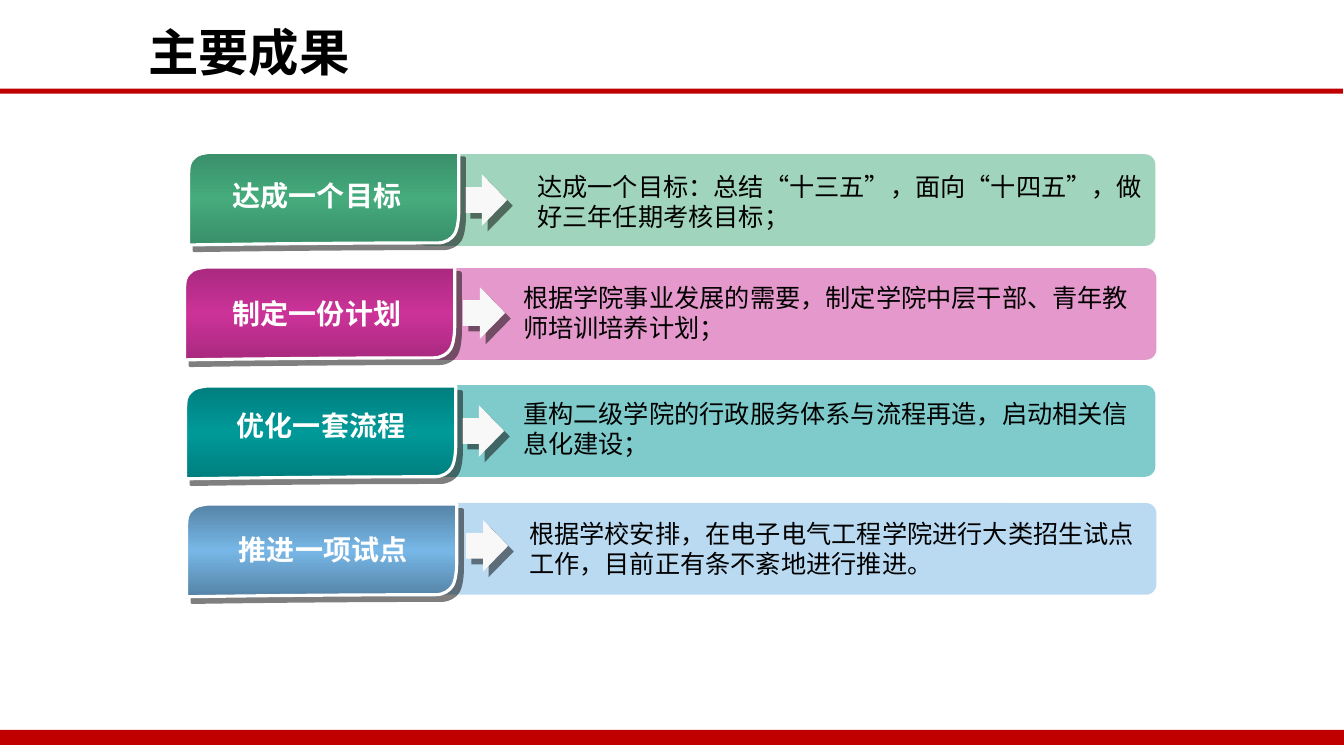
from copy import deepcopy
from dataclasses import dataclass

from lxml import etree
from pptx import Presentation
from pptx.dml.color import RGBColor
from pptx.enum import shapes, text
from pptx.oxml import ns
from pptx.shapes.autoshape import Shape
from pptx.slide import Slide
from pptx.util import Pt

PX = 9144
FONT = "Noto Sans CJK SC"
LINE_HEIGHT = 1.2
BLACK = RGBColor(0x00, 0x00, 0x00)
WHITE = RGBColor(0xFF, 0xFF, 0xFF)
RED = RGBColor(0xC0, 0x00, 0x00)
ARROW_GREY = RGBColor(0xF8, 0xF8, 0xF8)
ARROW_SHADOW = RGBColor(0x01, 0x01, 0x01)
GREEN = RGBColor(0x45, 0xAB, 0x7D)
PINK = RGBColor(0xCC, 0x33, 0x99)
TEAL = RGBColor(0x00, 0x99, 0x99)
BLUE = RGBColor(0x77, 0xB7, 0xE7)

Point = tuple[int, int]
Box = tuple[int, int, int, int]
TAB_START: Point = (21, 0)
TAB_SEGMENTS: list[tuple[Point, ...]] = [
    ((268, 0),),
    ((268, 0), (268, 30), (268, 59)),
    ((268, 59), (268, 74), (264, 81)),
    ((261, 86), (255, 90), (247, 90)),
    ((122, 90), (0, 92), (0, 92)),
    ((0, 27),),
    ((0, 12), (1, 10), (5, 6)),
    ((9, 1), (16, 1), (21, 0)),
]


@dataclass(frozen=True)
class Achievement:
    """One row: a coloured tab, an arrow and a band with its description."""

    label: str
    detail: str
    color: RGBColor
    shade: int
    band: Box
    tab: Point
    arrow: Point
    label_at: Point
    detail_box: Box


ACHIEVEMENTS = [
    Achievement("达成一个目标", "达成一个目标：总结“十三五”，面向“十四五”，做好三年任期考核目标；",
                GREEN, 67, (413, 153, 733, 91), (187, 151), (461, 173),
                (181, 172), (523, 165, 624, 71)),
    Achievement("制定一份计划", "根据学院事业发展的需要，制定学院中层干部、青年教师培训培养计划；",
                PINK, 64, (410, 266, 737, 91), (183, 265), (459, 285),
                (181, 289), (509, 275, 621, 71)),
    Achievement("优化一套流程", "重构二级学院的行政服务体系与流程再造，启动相关信息化建设；",
                TEAL, 64, (413, 382, 733, 91), (184, 383), (458, 402),
                (185, 400), (509, 390, 628, 71)),
    Achievement("推进一项试点", "根据学校安排，在电子电气工程学院进行大类招生试点工作，目前正有条不紊地进行推进。",
                BLUE, 47, (412, 499, 735, 91), (185, 500), (462, 516),
                (187, 523), (515, 509, 633, 71)),
]


def add_filled(page: Slide, kind: shapes.MSO_SHAPE, box: Box, color: RGBColor) -> Shape:
    """Add a preset shape with a plain fill, no line and no shadow."""
    shape = page.shapes.add_shape(kind, *(PX * length for length in box))
    shape.shadow.inherit = False
    shape.fill.solid()
    shape.fill.fore_color.rgb = color
    shape.line.fill.background()
    return shape


def modify_color(parent: etree._Element, effect: str, percent: int) -> None:
    """Add an alpha or shade to the first RGB colour under an element."""
    color = parent.find(".//" + ns.qn("a:srgbClr"))
    etree.SubElement(color, ns.qn(effect), val=str(percent * 1000))


def cast_shadow(shape: Shape, color: RGBColor) -> None:
    """Give a shape a hard half-transparent shadow to its lower right."""
    shape.shadow.inherit = False
    effects = shape._element.spPr.find(ns.qn("a:effectLst"))
    shadow = etree.SubElement(effects, ns.qn("a:outerShdw"), blurRad="0",
                              dist=str(Pt(5.7)), dir="2700000", algn="ctr", rotWithShape="0")
    etree.SubElement(shadow, ns.qn("a:srgbClr"), val=str(color))
    modify_color(shadow, "a:alpha", 50)


def build_tab_outline(page: Slide, left: int, top: int) -> Shape:
    """Build the tab outline from straight lines and cubic curves."""
    builder = page.shapes.build_freeform(left + TAB_START[0], top + TAB_START[1], scale=PX)
    builder.add_line_segments([(left + x, top + y) for *_, (x, y) in TAB_SEGMENTS], close=True)
    tab = builder.convert_to_shape()
    lines = list(tab._element.spPr.iter(ns.qn("a:lnTo")))
    for line, segment in zip(lines, TAB_SEGMENTS):
        if len(segment) == 3:
            line.tag = ns.qn("a:cubicBezTo")
            for index, (x, y) in enumerate(segment[:2]):
                control = etree.Element(ns.qn("a:pt"), x=str(x), y=str(y))
                line.insert(index, control)
    return tab


def add_tab(page: Slide, row: Achievement) -> None:
    """Draw the gradient tab with a white line and a shadow."""
    tab = build_tab_outline(page, *row.tab)
    tab.fill.gradient()
    tab.fill.gradient_angle = 270
    stops = tab._element.spPr.find(".//" + ns.qn("a:gsLst"))
    stops.append(deepcopy(stops[0]))
    for index, stop in enumerate(tab.fill.gradient_stops):
        stop.color.rgb = row.color
        stop.position = index / 2
    for end in (stops[0], stops[2]):
        modify_color(end, "a:shade", row.shade)
    tab.line.color.rgb = WHITE
    tab.line.width = Pt(2.25)
    cast_shadow(tab, BLACK)


def add_text(page: Slide, box: Box, words: str, size: int, color: RGBColor,
             bold: bool = False, centred: bool = False) -> None:
    """Add a wrapped text box with one paragraph."""
    frame = page.shapes.add_textbox(*(PX * length for length in box)).text_frame
    frame.word_wrap = True
    frame.auto_size = text.MSO_AUTO_SIZE.SHAPE_TO_FIT_TEXT
    frame.text = words
    para = frame.paragraphs[0]
    para.line_spacing = Pt(size * LINE_HEIGHT)
    para.alignment = text.PP_ALIGN.CENTER if centred else text.PP_ALIGN.LEFT
    span = para.runs[0]
    span.font.size = Pt(size)
    span.font.bold = bold
    span.font.name = FONT
    span.font.color.rgb = color
    etree.SubElement(span.font._element, ns.qn("a:ea"), typeface=FONT)


def add_row(page: Slide, row: Achievement) -> None:
    """Draw one achievement from back to front."""
    band = add_filled(page, shapes.MSO_SHAPE.ROUNDED_RECTANGLE, row.band, row.color)
    band.adjustments[0] = 0.115
    modify_color(band._element.spPr, "a:alpha", 50)
    arrow = add_filled(page, shapes.MSO_SHAPE.RIGHT_ARROW, (*row.arrow, 42, 51), ARROW_GREY)
    arrow.adjustments[1] = 0.594
    cast_shadow(arrow, ARROW_SHADOW)
    add_tab(page, row)
    add_text(page, (*row.label_at, 267, 44), row.label, 20, WHITE, bold=True, centred=True)
    add_text(page, row.detail_box, row.detail, 18, BLACK)


def main() -> None:
    """Build the slide and save it."""
    deck = Presentation()
    deck.slide_width, deck.slide_height = 1333 * PX, 750 * PX
    page = deck.slides.add_slide(deck.slide_layouts[6])
    for rule in ((0, 88, 1332, 5), (-1, 724, 1335, 15)):
        add_filled(page, shapes.MSO_SHAPE.RECTANGLE, rule, RED)
    add_text(page, (137, 16, 727, 71), "主要成果", 36, BLACK, bold=True)
    for row in ACHIEVEMENTS:
        add_row(page, row)
    deck.save("out.pptx")


if __name__ == "__main__":
    main()
